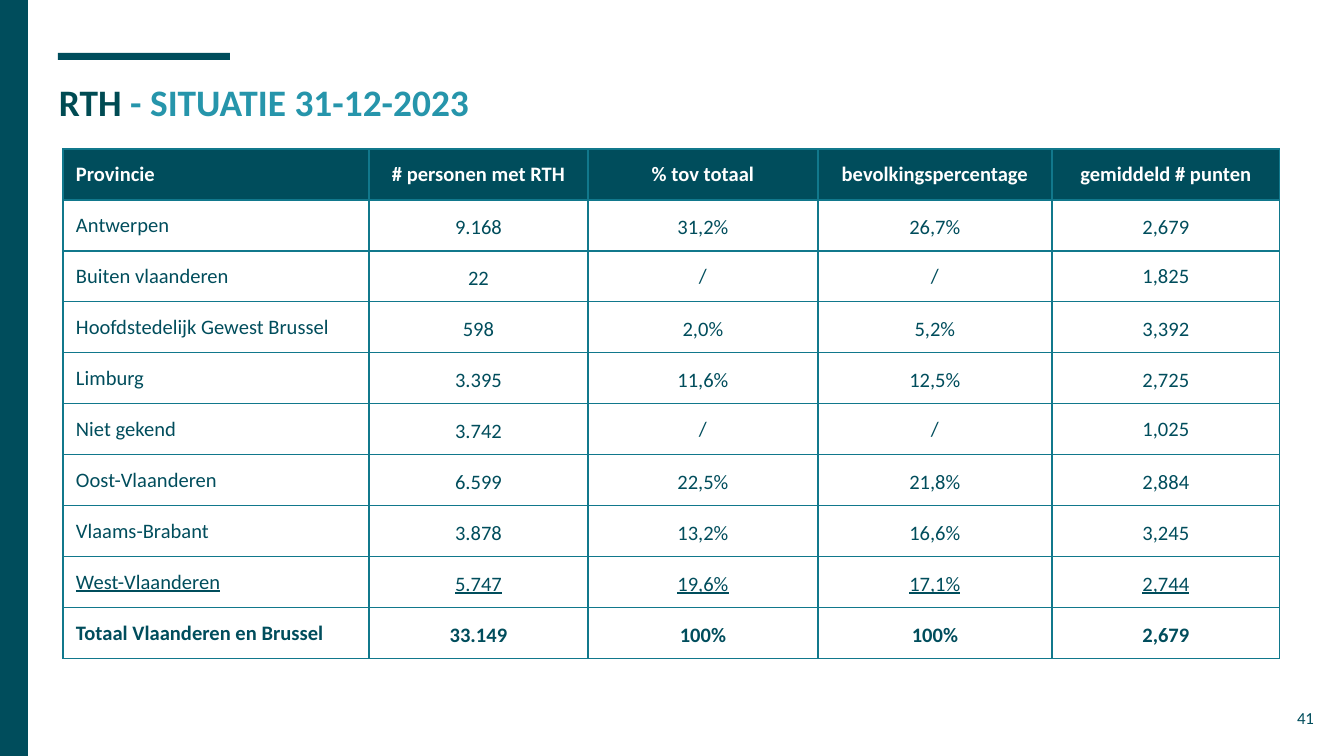
from lxml import etree
from pptx import Presentation
from pptx import util as u
from pptx.dml.color import RGBColor
from pptx.enum import shapes, text
from pptx.oxml.ns import qn

TEAL, EDGE, WHITE = "004D5C", "11788C", "FFFFFF"
TITLE = [("RTH", "004B53"), (" - SITUATIE 31-12-2023", "2695AB")]
PAGE = "41"
BARS = [(58, 53, 172, 7), (0, 0, 28, 756)]
ROWS = [
    ("Provincie", "# personen met RTH", "% tov totaal", "bevolkingspercentage", "gemiddeld # punten"),
    ("Antwerpen", "9.168", "31,2%", "26,7%", "2,679"),
    ("Buiten vlaanderen", "22", "/", "/", "1,825"),
    ("Hoofdstedelijk Gewest Brussel", "598", "2,0%", "5,2%", "3,392"),
    ("Limburg", "3.395", "11,6%", "12,5%", "2,725"),
    ("Niet gekend", "3.742", "/", "/", "1,025"),
    ("Oost-Vlaanderen", "6.599", "22,5%", "21,8%", "2,884"),
    ("Vlaams-Brabant", "3.878", "13,2%", "16,6%", "3,245"),
    ("West-Vlaanderen", "5.747", "19,6%", "17,1%", "2,744"),
    ("Totaal Vlaanderen en Brussel", "33.149", "100%", "100%", "2,679"),
]
WIDTHS = [306, 219, 230, 234, 228]
LEFT, TOP, HIGH = 63, 149, 51
LAST = len(ROWS) - 1
LOOKS = {  # rows that differ from plain text
    0: {"bold": True},
    LAST - 1: {"underline": True},
    LAST: {"bold": True},
}


def px(n):
    return u.Emu(round(n * 914400 / 134.4))


def rgb(code):
    return RGBColor.from_string(code)


def write(para, words, size, color, **looks):
    run = para.add_run()
    run.text = words
    form = {"name": "Calibri", "size": u.Pt(size), "bold": False, **looks}
    for key, val in form.items():
        setattr(run.font, key, val)
    run.font.color.rgb = rgb(color)


def add_text(slide, box, runs, size, align, **looks):
    frame = slide.shapes.add_textbox(*map(px, box)).text_frame
    form = {"word_wrap": True, "vertical_anchor": text.MSO_ANCHOR.TOP}
    for side in ("left", "top", "right", "bottom"):
        form["margin_" + side] = px(13)
    for key, val in form.items():
        setattr(frame, key, val)
    para = frame.paragraphs[0]
    para.alignment = align
    for words, color in runs:
        write(para, words, size, color, **looks)


def add_edges(cell):
    props = cell._tc.get_or_add_tcPr()
    for tag in ("a:lnL", "a:lnR", "a:lnT", "a:lnB"):
        line = etree.SubElement(props, qn(tag), w=str(u.Pt(0.75)))
        fill = etree.SubElement(line, qn("a:solidFill"))
        etree.SubElement(fill, qn("a:srgbClr"), val=EDGE)


def fill_cell(cell, words, row, col):
    add_edges(cell)
    form = {"margin_left": px(13), "margin_right": px(13), "margin_top": 0,
            "margin_bottom": 0, "vertical_anchor": text.MSO_ANCHOR.MIDDLE}
    for key, val in form.items():
        setattr(cell, key, val)
    if row == 0:
        cell.fill.solid()
        cell.fill.fore_color.rgb = rgb(TEAL)
    else:
        cell.fill.background()
    para = cell.text_frame.paragraphs[0]
    para.alignment = text.PP_ALIGN.CENTER if col else text.PP_ALIGN.LEFT
    no_share = ROWS[row][2] == "/" and col > 1
    if row and col and not no_share:
        para.line_spacing = 1.15
    write(para, words, 11, TEAL if row else WHITE, **LOOKS.get(row, {}))


def add_grid(slide):
    box = (LEFT, TOP, sum(WIDTHS), HIGH * len(ROWS))
    grid = slide.shapes.add_table(len(ROWS), len(WIDTHS), *map(px, box)).table
    grid.horz_banding = False
    for col, wide in zip(grid.columns, WIDTHS):
        col.width = px(wide)
    for r, row in enumerate(ROWS):
        grid.rows[r].height = px(HIGH)
        for c, words in enumerate(row):
            fill_cell(grid.cell(r, c), words, r, c)


def main():
    deck = Presentation()
    deck.slide_width, deck.slide_height = px(1344), px(756)
    slide = deck.slides.add_slide(deck.slide_layouts[6])
    for box in BARS:
        bar = slide.shapes.add_shape(shapes.MSO_SHAPE.RECTANGLE, *map(px, box))
        bar.shadow.inherit = False
        bar.fill.solid()
        bar.fill.fore_color.rgb = rgb(TEAL)
        bar.line.fill.background()
    add_text(slide, (46, 66, 1252, 85), TITLE, 20, text.PP_ALIGN.LEFT, bold=True)
    add_text(slide, (1246, 698, 81, 58), [(PAGE, TEAL)], 9, text.PP_ALIGN.RIGHT)
    add_grid(slide)
    deck.save("out.pptx")


if __name__ == "__main__":
    main()
